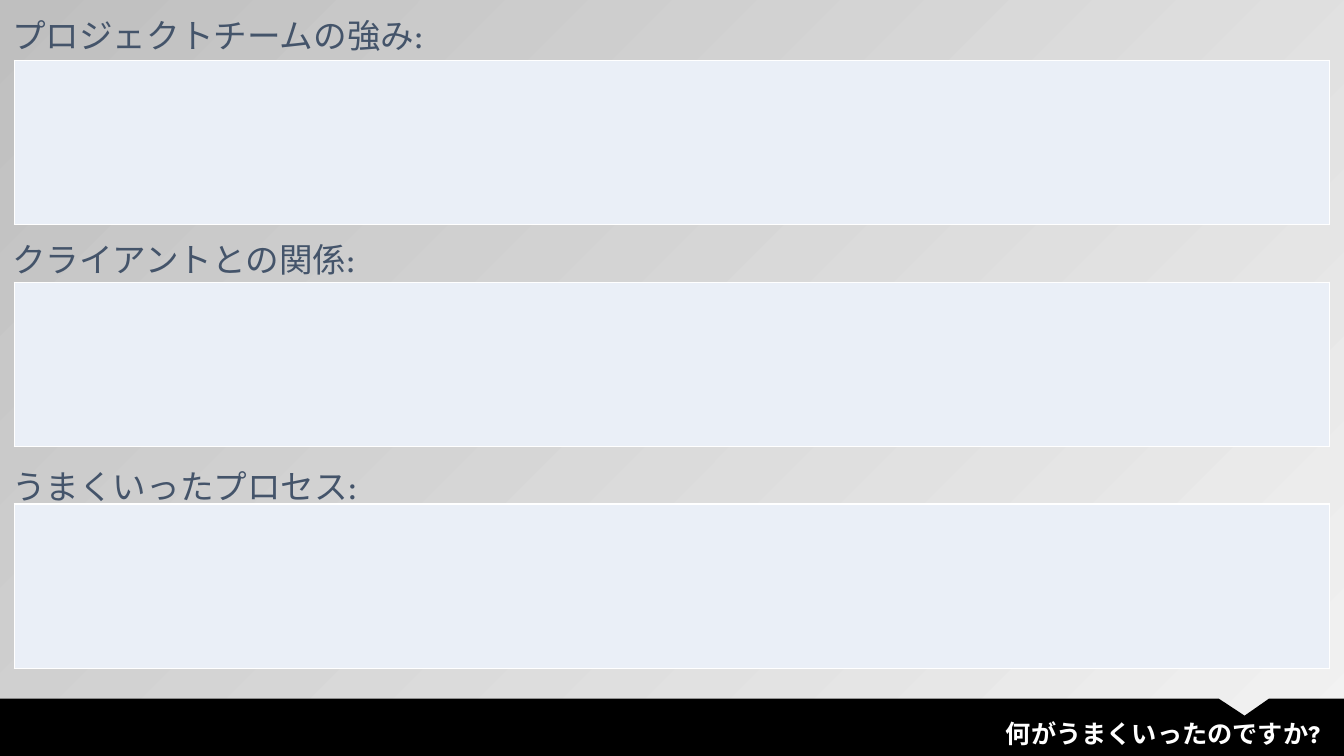
from lxml.etree import SubElement
from pptx import Presentation
from pptx.dml.color import RGBColor
from pptx.enum.text import MSO_AUTO_SIZE as AutoSize, PP_ALIGN as Align
from pptx.oxml.ns import qn
from pptx.util import Pt

BLACK = RGBColor(0x00, 0x00, 0x00)
WHITE = RGBColor(0xFF, 0xFF, 0xFF)
SLATE = RGBColor(0x44, 0x54, 0x6A)
PALE_BLUE = RGBColor(0xEA, 0xEF, 0xF7)
LIGHT_GREY = RGBColor(0xF2, 0xF2, 0xF2)
MID_GREY = RGBColor(0xBF, 0xBF, 0xBF)
FONT = "League Spartan"


def add_label(page, text, left, top, width, height, size, color):
    box = page.shapes.add_textbox(Pt(left), Pt(top), Pt(width), Pt(height))
    frame = box.text_frame
    frame.word_wrap = True
    frame.auto_size = AutoSize.SHAPE_TO_FIT_TEXT
    para = frame.paragraphs[0]
    span = para.add_run()
    span.text = text
    span.font.name = FONT
    span.font.size = Pt(size)
    span.font.color.rgb = color
    return frame


def add_borders(cell, color, width):
    props = cell._tc.get_or_add_tcPr()
    for position, side in enumerate(("lnL", "lnR", "lnT", "lnB")):
        line = SubElement(props, qn(f"a:{side}"), w=str(Pt(width)))
        fill = SubElement(line, qn("a:solidFill"))
        SubElement(fill, qn("a:srgbClr"), val=str(color))
        props.insert(position, line)


deck = Presentation()
deck.slide_width = Pt(960)
deck.slide_height = Pt(540)
page = deck.slides.add_slide(deck.slide_layouts[6])

backdrop = page.background.fill
backdrop.gradient()
backdrop.gradient_angle = 135
for stop, color in zip(backdrop.gradient_stops, (LIGHT_GREY, MID_GREY)):
    stop.color.rgb = color

outline = [(0, 499), (870.5, 499), (889, 511.2), (906.5, 499),
           (960, 499), (960, 540), (0, 540)]
points = [(Pt(x), Pt(y)) for x, y in outline]
builder = page.shapes.build_freeform(*points[0], scale=1.0)
builder.add_line_segments(points[1:], close=True)
footer = builder.convert_to_shape()
footer.shadow.inherit = False
footer.fill.solid()
footer.fill.fore_color.rgb = BLACK
footer.line.fill.background()

question = add_label(page, "何がうまくいったのですか?", 298, 509.8, 652.3, 29, 18, WHITE)
question.paragraphs[0].alignment = Align.RIGHT
question.paragraphs[0].runs[0].font.bold = True

sections = [
    ("プロジェクトチームの強み:", 13.7, 31.7, Pt(21.5)),
    ("クライアントとの関係:", 173.5, 31.7, Pt(21.5)),
    ("うまくいったプロセス:", 322.6, 41, 1.2),
]
for index, (heading, top, height, spacing) in enumerate(sections):
    answer = page.shapes.add_table(
        1, 1, Pt(10.1), Pt(43.2 + index * 158.4), Pt(939.6), Pt(117.4)).table
    answer.first_row = False
    answer.horz_banding = False
    cell = answer.cell(0, 0)
    cell.fill.solid()
    cell.fill.fore_color.rgb = PALE_BLUE
    add_borders(cell, WHITE, 1)

    frame = add_label(page, heading, 0, top, 549.4, height, 24, SLATE)
    frame.margin_left = frame.margin_right = Pt(8.64)
    frame.margin_top = frame.margin_bottom = Pt(4.32)
    frame.paragraphs[0].line_spacing = spacing
    frame.paragraphs[0].space_before = Pt(4.8)

deck.save("out.pptx")
